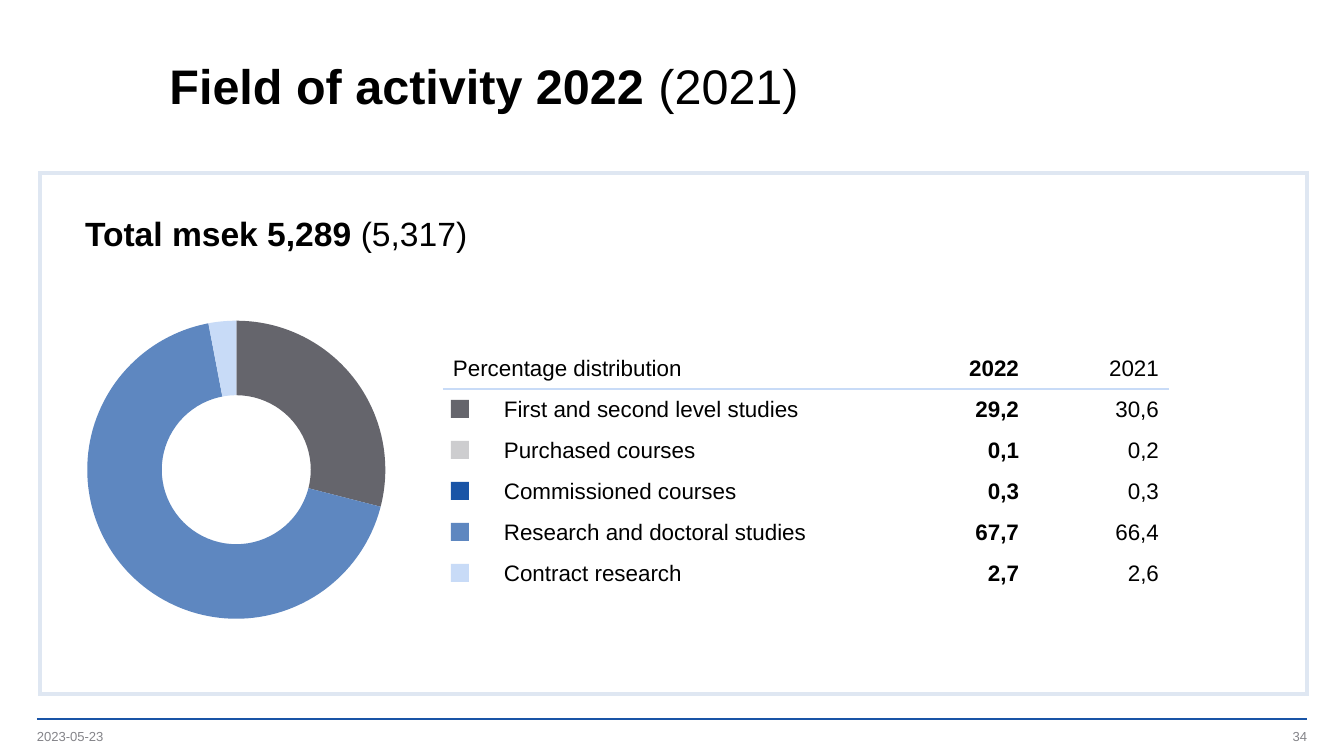
from lxml import etree
from pptx import Presentation
from pptx import util as u
from pptx.chart.data import CategoryChartData
from pptx.dml.color import RGBColor
from pptx.enum import chart as charts, shapes, text
from pptx.oxml import parse_xml
from pptx.oxml.ns import nsdecls, qn

PX = 914400 / 134.4
FONT = "Arial"
COLORS = {
    "ink": "000000", "muted": "848489", "rule": "1954A6", "frame": "DFE7F2",
    "grid": "C8DBF7", "first": "65656C", "purchased": "C1C1C5",
    "purchased_key": "838389", "commissioned": "1954A6",
    "research": "5E87C0", "contract": "C8DBF7",
}
FIELDS = [
    ("First and second level studies", 29.2, 30.6, "first"),
    ("Purchased courses", 0.1, 0.2, "purchased"),
    ("Commissioned courses", 0.3, 0.3, "commissioned"),
    ("Research and doctoral studies", 67.7, 66.4, "research"),
    ("Contract research", 2.7, 2.6, "contract"),
]
LEFT, RIGHT = text.PP_ALIGN.LEFT, text.PP_ALIGN.RIGHT


def px(length):
    """Turn pixels into EMU."""
    return u.Emu(round(length * PX))


def box_emu(box):
    """Turn a pixel box into EMU lengths."""
    return [px(length) for length in box]


def rgb(key):
    """Look up a named colour."""
    return RGBColor.from_string(COLORS[key])


def write(frame, *runs, size=12, color="ink", align=LEFT, line=None,
          margins=None, wrap=True):
    """Fill a text frame with one paragraph of (words, bold) runs."""
    frame.word_wrap = wrap
    frame.vertical_anchor = text.MSO_ANCHOR.MIDDLE
    if margins:
        (frame.margin_left, frame.margin_top,
         frame.margin_right, frame.margin_bottom) = box_emu(margins)
    paragraph = frame.paragraphs[0]
    paragraph.alignment = align
    if line:
        paragraph.line_spacing = u.Pt(line)
    for words, bold in runs:
        run = paragraph.add_run()
        run.text = words
        run.font.name, run.font.size, run.font.bold = FONT, u.Pt(size), bold
        run.font.color.rgb = rgb(color)


def add_heading(slide, box):
    """Place the slide title."""
    title = slide.shapes.title
    title.left, title.top, title.width, title.height = box_emu(box)
    title.text_frame.auto_size = text.MSO_AUTO_SIZE.NONE
    write(title.text_frame, ("Field of activity 2022 ", True), ("(2021)", False),
          size=26, line=30)


def add_footer(slide, box):
    """Draw the footer rule with the date and the page number below it."""
    left, top, width, height = box
    rule = slide.shapes.add_connector(
        shapes.MSO_CONNECTOR.STRAIGHT, *box_emu((left, top, left + width, top)))
    rule.line.color.rgb, rule.line.width = rgb("rule"), u.Pt(1)
    etree.SubElement(rule.element.spPr, qn("a:effectLst"))
    half = width // 4
    for x, words, align in ((left, "2023-05-23", LEFT),
                            (left + width - half, "34", RIGHT)):
        label = slide.shapes.add_textbox(*box_emu((x, top + 9, half, height - 9)))
        write(label.text_frame, (words, False), size=7, color="muted",
              align=align, margins=(0, 0, 0, 0), wrap=False)


def add_panel(slide, box):
    """Draw the frame and the total inside its top left corner."""
    left, top, width, height = box
    total = slide.shapes.add_textbox(*box_emu((left + 3, top + 24, 560, 72)))
    write(total.text_frame, ("Total msek 5,289 ", True), ("(5,317)", False),
          size=18, margins=(42, 7, 13, 7))
    frame = slide.shapes.add_shape(shapes.MSO_SHAPE.RECTANGLE, *box_emu(box))
    frame.shadow.inherit = False
    frame.fill.background()
    frame.line.color.rgb, frame.line.width = rgb("frame"), u.Pt(2)
    outline = frame.element.spPr.find(qn("a:ln"))
    etree.SubElement(outline, qn("a:miter")).set("lim", "800000")


def add_doughnut(slide, box):
    """Chart the share of each field in 2022."""
    shares = CategoryChartData()
    shares.categories = [str(number + 1) for number in range(len(FIELDS))]
    shares.add_series("Series 1", [round(field[1]) for field in FIELDS])
    chart = slide.shapes.add_chart(
        charts.XL_CHART_TYPE.DOUGHNUT, *box_emu(box), shares).chart
    chart.has_legend = chart.has_title = False
    chart.font.name, chart.font.size = FONT, u.Pt(10)
    chart.font.color.rgb = rgb("ink")
    plot = chart.plots[0]
    plot.vary_by_categories = True
    for index, field in enumerate(FIELDS):
        point = plot.series[0].points[index].format
        point.fill.solid()
        point.fill.fore_color.rgb = rgb(field[3])
        point.line.fill.background()
    area = chart._chartSpace.find(".//" + qn("c:plotArea"))
    area.find(".//" + qn("c:holeSize")).set("val", "65")
    for layout in area.findall(qn("c:layout")):
        area.remove(layout)
    area.insert(0, parse_xml(
        f'<c:layout {nsdecls("c")}><c:manualLayout><c:layoutTarget val="inner"/>'
        '<c:xMode val="edge"/><c:yMode val="edge"/><c:x val="0.15"/><c:y val="0.05"/>'
        '<c:w val="0.69"/><c:h val="0.89"/></c:manualLayout></c:layout>'))


def add_bottom_border(cell):
    """Draw a thin line below a cell."""
    cell._tc.get_or_add_tcPr().insert(0, parse_xml(
        f'<a:lnB {nsdecls("a")} w="12700"><a:solidFill>'
        f'<a:srgbClr val="{COLORS["grid"]}"/></a:solidFill></a:lnB>'))


def add_distribution(slide, box):
    """Build the percentage table with a colour key in its first column."""
    left, top, width, height = box
    rows = [("Percentage distribution", "", "2022", "2021")]
    for name, now, before, _ in FIELDS:
        rows.append(("", name, *(f"{v:.1f}".replace(".", ",") for v in (now, before))))
    row_height = height // len(FIELDS) - 8
    header_height = height - row_height * len(FIELDS)
    table = slide.shapes.add_table(len(rows), 4, *box_emu(box)).table
    table.first_row = table.horz_banding = False
    table._tbl.tblPr.find(qn("a:tableStyleId")).text = \
        "{2D5ABB26-0587-4C30-8999-92F81FD0307C}"
    for column, share in zip(table.columns, (51, 395, 140, 140)):
        column.width = px(share)
    for r, row in enumerate(rows):
        table.rows[r].height = px(row_height if r else header_height)
        for c, words in enumerate(row):
            cell = table.cell(r, c)
            cell.fill.background()
            (cell.margin_left, cell.margin_top,
             cell.margin_right, cell.margin_bottom) = box_emu((10, 5, 10, 5))
            cell.vertical_anchor = text.MSO_ANCHOR.MIDDLE
            runs = [(words, c == 2)] if words else []
            write(cell.text_frame, *runs, align=RIGHT if c > 1 else LEFT)
            cell.text_frame.paragraphs[0].font.size = u.Pt(12)
            if r == 0:
                add_bottom_border(cell)
    table.cell(0, 0).merge(table.cell(0, 1))
    for index, field in enumerate(FIELDS):
        key_top = top + header_height + index * row_height + 11
        add_key(slide, (left + 8, key_top, 18, 18), field[3])


def add_key(slide, box, color):
    """Draw one colour key square."""
    key = slide.shapes.add_shape(shapes.MSO_SHAPE.RECTANGLE, *box_emu(box))
    key.shadow.inherit = False
    key.line.fill.background()
    key.fill.solid()
    key.fill.fore_color.rgb = rgb(color)
    if color == "purchased":
        key.fill.fore_color.rgb = rgb("purchased_key")
        tint = key.element.spPr.find(".//" + qn("a:srgbClr"))
        etree.SubElement(tint, qn("a:alpha")).set("val", "40000")


def main():
    """Build and save the slide."""
    deck = Presentation()
    deck.slide_width, deck.slide_height = px(1344), px(756)
    slide = deck.slides.add_slide(deck.slide_layouts[5])
    add_footer(slide, (37, 719, 1270, 26))
    add_heading(slide, (156, 37, 1110, 99))
    add_panel(slide, (40, 173, 1267, 521))
    add_doughnut(slide, (22, 304, 433, 335))
    add_distribution(slide, (443, 349, 726, 245))
    deck.save("out.pptx")


if __name__ == "__main__":
    main()
